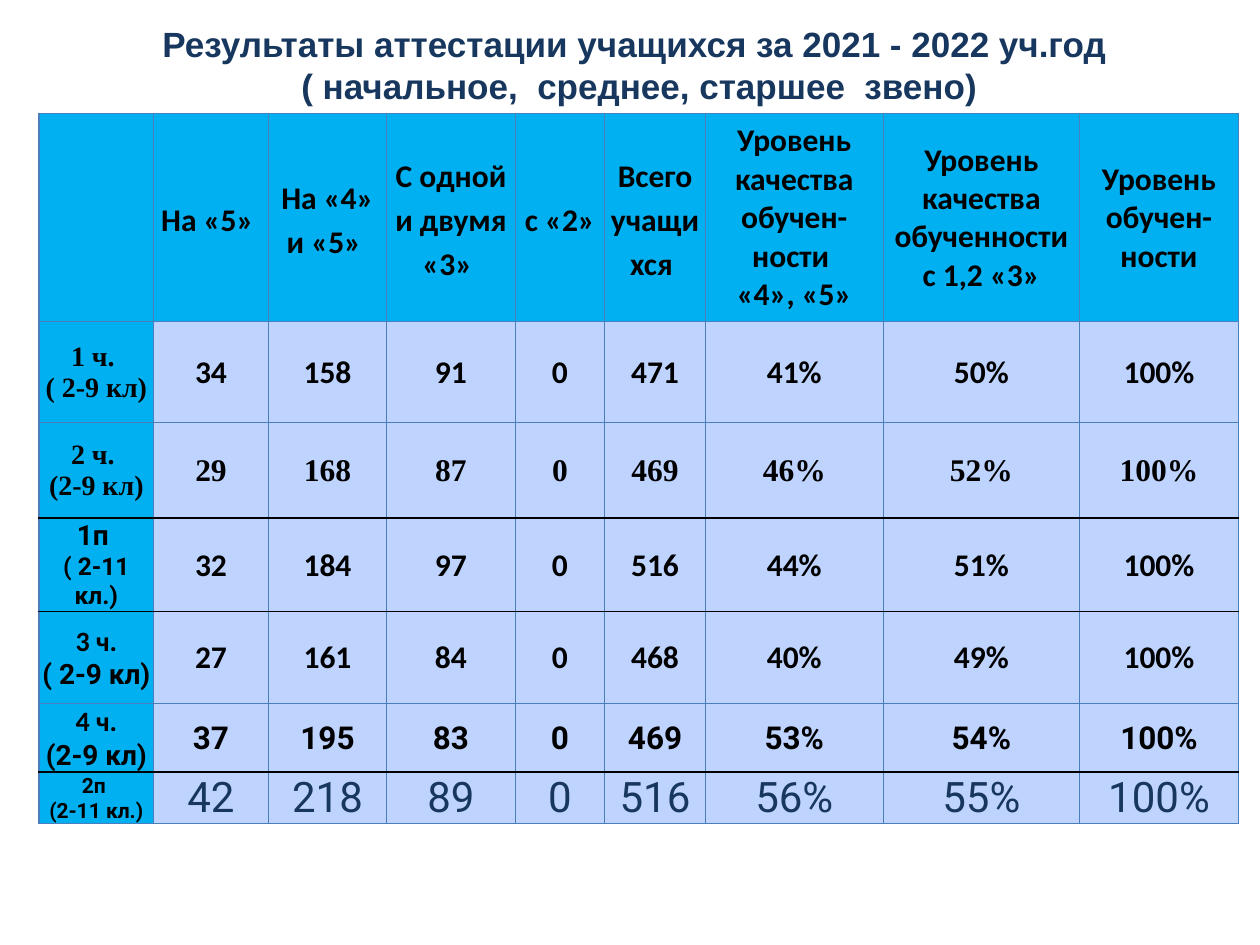
from lxml.etree import SubElement
from pptx import Presentation
from pptx.dml.color import RGBColor
from pptx.enum.text import MSO_ANCHOR, MSO_AUTO_SIZE, PP_ALIGN
from pptx.oxml.ns import qn
from pptx.util import Inches, Pt

HUES = {"head": "00B0F0", "body": "BFD3FF", "grid": "4B7EBC",
        "black": "000000", "navy": "17375E"}
SERIF, SANS, ROBOTO = "Times New Roman", "Calibri", "Roboto"

heads = ["", "На «5» ", "На «4» и «5» ", "С одной и двумя «3» ", "с «2» ",
         "Всего учащихся ", "Уровень качества обучен-ности \n«4», «5»",
         "Уровень качества обученности с 1,2 «3»", "Уровень обучен-ности"]
rows = [
    (["1 ч. ", "( 2-9 кл)"], [16, 16], SERIF, 18, SANS,
     "34 158 91 0 471 41% 50% 100%"),
    (["2 ч. ", "(2-9 кл)"], [16, 16], SERIF, 18, SERIF,
     "29 168 87 0 469 46% 52% 100%"),
    (["1п ", "( 2-11 кл.)"], [16, 14], ROBOTO, 18, SANS,
     "32 184 97 0 516 44% 51% 100%"),
    (["3 ч.", "( 2-9 кл)"], [16, 16], [SANS, ROBOTO], 18, SANS,
     "27 161 84 0 468 40% 49% 100%"),
    (["4 ч.", "(2-9 кл)"], [16, 16], [SANS, ROBOTO], 18, ROBOTO,
     "37 195 83 0 469 53% 54% 100%"),
    (["2п ", "(2-11 кл.)"], [12, 12], ROBOTO, 24, ROBOTO,
     "42 218 89 0 516 56% 55% 100%"),
]
wide = [0.91, 0.91, 0.94, 1.02, 0.71, 0.8, 1.41, 1.56, 1.26]
high = [1.65, 0.8, 0.76, 0.5, 0.73, 0.47, 0.23]
rules = {2: 1, 3: 0.75, 5: 1}


def write(frame, lines, sizes, faces, hue="black", bold=True, space=1.0):
    frame.text = "\n".join(lines)
    for para, size, face in zip(frame.paragraphs, sizes, faces):
        para.alignment = PP_ALIGN.CENTER
        para.line_spacing = space
        font = para.runs[0].font
        look = {"size": Pt(size), "name": face, "bold": bold}
        for name, value in look.items():
            setattr(font, name, value)
        font.color.rgb = RGBColor.from_string(HUES[hue])


def edge(cell, row):
    props = cell._tc.get_or_add_tcPr()
    for side, rule in (("L", None), ("R", None), ("T", row - 1), ("B", row)):
        hue = "black" if rule in rules else "grid"
        line = SubElement(props, qn("a:ln" + side),
                          w=str(Pt(rules.get(rule, 0.75))))
        fill = SubElement(line, qn("a:solidFill"))
        SubElement(fill, qn("a:srgbClr"), val=HUES[hue])


deck = Presentation()
deck.slide_width, deck.slide_height = Inches(10), Inches(7.5)
slide = deck.slides.add_slide(deck.slide_layouts[5])

title = slide.shapes.title
place = {"left": 0.43, "top": 0.13, "width": 9.29, "height": 0.77}
for name, value in place.items():
    setattr(title, name, Inches(value))
write(title.text_frame,
      ["Результаты аттестации учащихся за 2021 - 2022 уч.год ",
       "( начальное,  среднее, старшее  звено)"],
      [20, 20], ["Arial", "Arial"], "navy")
title.text_frame.word_wrap = True
title.text_frame.auto_size = MSO_AUTO_SIZE.SHAPE_TO_FIT_TEXT

table = slide.shapes.add_table(len(high), len(wide), Inches(0.31), Inches(0.9),
                               Inches(sum(wide)), Inches(sum(high))).table
for col, size in zip(table.columns, wide):
    col.width = Inches(size)
for line, size in zip(table.rows, high):
    line.height = Inches(size)

for r in range(len(high)):
    for c in range(len(wide)):
        cell = table.cell(r, c)
        side = 0.05 if r == 0 and c < 6 else 0.01
        form = {"margin_left": Inches(side), "margin_right": Inches(side),
                "margin_top": Inches(0.01), "margin_bottom": 0,
                "vertical_anchor": MSO_ANCHOR.MIDDLE}
        for name, value in form.items():
            setattr(cell, name, value)
        edge(cell, r)
        cell.fill.solid()
        hue = "head" if r == 0 or c == 0 else "body"
        cell.fill.fore_color.rgb = RGBColor.from_string(HUES[hue])

for c, text in enumerate(heads):
    if text:
        write(table.cell(0, c).text_frame, text.split("\n"), [18, 18],
              [SANS, SANS], space=1.15 if c < 6 else 1.0)

for r, (label, sizes, faces, size, face, marks) in enumerate(rows, 1):
    if isinstance(faces, str):
        faces = [faces, faces]
    write(table.cell(r, 0).text_frame, label, sizes, faces)
    last = r == len(rows)
    for c, mark in enumerate(marks.split(), 1):
        write(table.cell(r, c).text_frame, [mark], [size], [face],
              "navy" if last else "black", not last)

deck.save("out.pptx")
